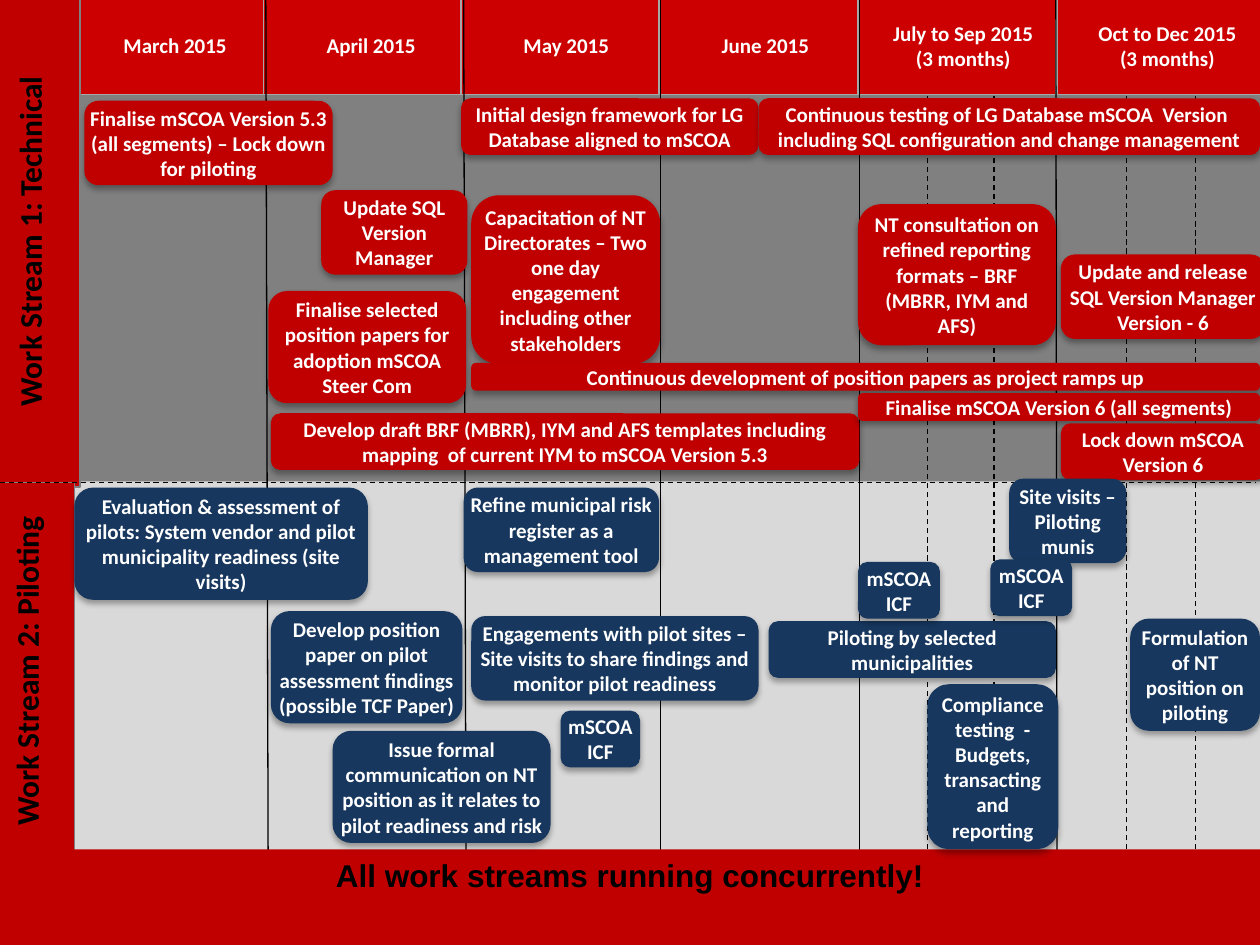
"""Draw the two work streams of the 2015 project plan on one slide."""
from typing import NamedTuple

from lxml.etree import SubElement
from pptx import Presentation
from pptx.dml.color import RGBColor
from pptx.enum.dml import MSO_LINE
from pptx.enum.shapes import MSO_CONNECTOR, MSO_SHAPE
from pptx.enum.text import MSO_ANCHOR, MSO_AUTO_SIZE, PP_ALIGN
from pptx.oxml.ns import qn
from pptx.util import Inches, Pt

RED, NAVY, HEAD = "C00000", "17375E", "CC0000"
WHITE, BLACK, GREY = "FFFFFF", "000000", "808080"


class Box(NamedTuple):
    left: float
    top: float
    width: float
    height: float
    text: str = ""


class Rule(NamedTuple):
    x1: float
    y1: float
    x2: float
    y2: float
    dash: bool = False


BANDS = [(Box(0.61, 0.68, 9.43, 3.15), GREY),
         (Box(0.55, 3.82, 9.45, 2.99), "D9D9D9")]
MONTHS = [(0.59, 1.5, "March 2015"), (2.09, 1.61, "April 2015"),
          (3.66, 1.57, "May 2015"), (5.24, 1.57, "June 2015"),
          (6.81, 1.57, "July to Sep 2015\n(3 months)"),
          (8.39, 1.65, "Oct to Dec 2015\n(3 months)")]
STREAMS = [Box(-1.65, 1.58, 3.9, 0.67, "Work Stream 1: Technical"),
           Box(-1.22, 5.01, 2.99, 0.63, "Work Stream 2: Piloting")]
RULES = [Rule(top, 0, foot, 7.5) for top, foot in
         [(2.11, 2.13), (3.68, 3.7), (5.24, 5.24), (6.82, 6.82), (8.38, 8.39)]]
RULES += [Rule(x, 7.53, x, 0.76, True) for x in (7.36, 7.89, 8.94, 9.49)]
RULES += [Rule(0, 3.83, 9.96, 3.83, True)]
FOOT = Box(-0.04, 6.74, 10.08, 0.79, "All work streams running concurrently!")
TECH = [
    Box(0.67, 0.8, 1.97, 0.67, "Finalise mSCOA Version 5.3 (all segments) – Lock down for piloting"),
    Box(2.13, 2.31, 1.57, 0.89, "Finalise selected position papers for adoption mSCOA Steer Com"),
    Box(2.55, 1.51, 1.16, 0.67, "Update SQL Version Manager"),
    Box(2.15, 3.28, 4.67, 0.45, "Develop draft BRF (MBRR), IYM and AFS templates including "
        "mapping  of current IYM to mSCOA Version 5.3"),
    Box(3.66, 0.78, 2.36, 0.45, "Initial design framework for LG Database aligned to mSCOA"),
    Box(6.02, 0.78, 3.98, 0.45, "Continuous testing of LG Database mSCOA  Version  "
        "including SQL configuration and change management"),
    Box(3.74, 1.55, 1.5, 1.34, "Capacitation of NT Directorates – Two one day engagement "
        "including other stakeholders"),
    Box(6.81, 1.62, 1.57, 1.12, "NT consultation on refined reporting formats – BRF "
        "(MBRR, IYM and AFS)"),
    Box(3.74, 2.88, 6.26, 0.22, "Continuous development of position papers as project ramps up"),
    Box(6.81, 3.12, 3.19, 0.22, "Finalise mSCOA Version 6 (all segments)"),
    Box(8.42, 2.02, 1.62, 0.67, "Update and release SQL Version Manager Version - 6"),
    Box(8.42, 3.36, 1.62, 0.45, "Lock down mSCOA Version 6"),
]
PILOT = [
    Box(0.59, 3.87, 2.33, 0.89, "Evaluation & assessment of pilots: System vendor and pilot "
        "municipality readiness (site visits)"),
    Box(2.15, 4.85, 1.52, 0.89, "Develop position paper on pilot assessment findings "
        "(possible TCF Paper)"),
    Box(3.68, 3.87, 1.55, 0.67, "Refine municipal risk register as a management tool"),
    Box(3.74, 4.89, 2.28, 0.67, "Engagements with pilot sites – Site visits to share findings "
        "and monitor pilot readiness"),
    Box(2.64, 5.8, 1.73, 0.89, "Issue formal communication on NT position as it relates to "
        "pilot readiness and risk"),
    Box(6.1, 4.93, 2.28, 0.45, "Piloting by selected municipalities"),
    Box(7.36, 5.43, 1.04, 1.31, "Compliance testing  - Budgets, transacting and reporting"),
    Box(8.01, 3.8, 0.93, 0.67, "Site visits – Piloting munis"),
    Box(8.97, 4.91, 1.03, 0.89, "Formulation of NT position on piloting"),
] + [Box(x, y, w, 0.45, "mSCOA ICF") for x, y, w in
     [(4.45, 5.64, 0.63), (7.86, 4.44, 0.65), (6.81, 4.46, 0.65)]]

LABEL = {"size": Pt(12), "name": "Calibri", "bold": True}
SIDE = {**LABEL, "size": Pt(18)}
CLOSE = {**SIDE, "name": "Arial"}
TIGHT = {"margin_left": 0, "margin_top": 0, "margin_right": 0, "margin_bottom": 0}
FRAME = {"word_wrap": True, "auto_size": MSO_AUTO_SIZE.NONE,
         "vertical_anchor": MSO_ANCHOR.MIDDLE}


def paint(form, tint: str) -> None:
    form.rgb = RGBColor.from_string(tint)


def apply(item, values: dict) -> None:
    for name, value in values.items():
        setattr(item, name, value)


def fill(shape, tint: str) -> None:
    shape.fill.solid()
    paint(shape.fill.fore_color, tint)


def write(shape, text: str, font: dict, tint: str, frame: dict, para: dict) -> None:
    apply(shape.text_frame, FRAME | frame)
    shape.text_frame.text = text
    for line in shape.text_frame.paragraphs:
        apply(line, {"alignment": PP_ALIGN.CENTER} | para)
        for run in line.runs:
            apply(run.font, font)
            paint(run.font.color, tint)


def block(slide, box: Box, tint: str, edge: str = "", kind=MSO_SHAPE.RECTANGLE):
    shape = slide.shapes.add_shape(kind, *map(Inches, box[:4]))
    shape.shadow.inherit = False
    fill(shape, tint)
    if edge:
        paint(shape.line.color, edge)
        shape.line.width = Pt(0.75)
    else:
        shape.line.fill.background()
    return shape


def shade(shape) -> None:
    glow = SubElement(shape._element.spPr.find(qn("a:effectLst")), qn("a:outerShdw"),
                      blurRad=str(Pt(3.5)), dist=str(Pt(2.2)), dir="5400000", rotWithShape="0")
    ink = SubElement(glow, qn("a:srgbClr"), val=BLACK)
    SubElement(ink, qn("a:alpha"), val="32000")


def task(slide, box: Box, tint: str) -> None:
    shape = block(slide, box, tint, kind=MSO_SHAPE.ROUNDED_RECTANGLE)
    shade(shape)
    write(shape, box.text, LABEL, WHITE, TIGHT, {})


def month(slide, left: float, width: float, text: str) -> None:
    shape = block(slide, Box(left, -0.03, width, 0.78), HEAD, "A6A6A6")
    write(shape, text, LABEL, WHITE, {}, {})
    for line in shape.text_frame.paragraphs:
        line._p.get_or_add_pPr().set("indent", str(Inches(0.1)))


def stream(slide, box: Box) -> None:
    shape = block(slide, box, RED, GREY)
    shape.rotation = 270
    write(shape, box.text, SIDE, BLACK, {}, {"line_spacing": Pt(12)})


def draw(slide, rule: Rule) -> None:
    line = slide.shapes.add_connector(MSO_CONNECTOR.STRAIGHT, *map(Inches, rule[:4]))
    paint(line.line.color, BLACK)
    line.line.width = Pt(0.75)
    if rule.dash:
        line.line.dash_style = MSO_LINE.DASH
    SubElement(line._element.spPr, qn("a:effectLst"))


def close(slide, box: Box) -> None:
    title = slide.shapes.title
    apply(title, dict(zip(("left", "top", "width", "height"), map(Inches, box[:4]))))
    fill(title, RED)
    write(title, box.text, CLOSE, BLACK, {"vertical_anchor": MSO_ANCHOR.TOP}, {})
    slide.shapes._spTree.append(title._element)


def main() -> None:
    deck = Presentation()
    apply(deck, {"slide_width": Inches(10), "slide_height": Inches(7.5)})
    slide = deck.slides.add_slide(deck.slide_layouts[5])
    for box, tint in BANDS:
        block(slide, box, tint)
    for item in MONTHS:
        month(slide, *item)
    for box in STREAMS:
        stream(slide, box)
    for rule in RULES:
        draw(slide, rule)
    close(slide, FOOT)
    for group, tint in ((TECH, RED), (PILOT, NAVY)):
        for box in group:
            task(slide, box, tint)
    deck.save("out.pptx")


if __name__ == "__main__":
    main()
